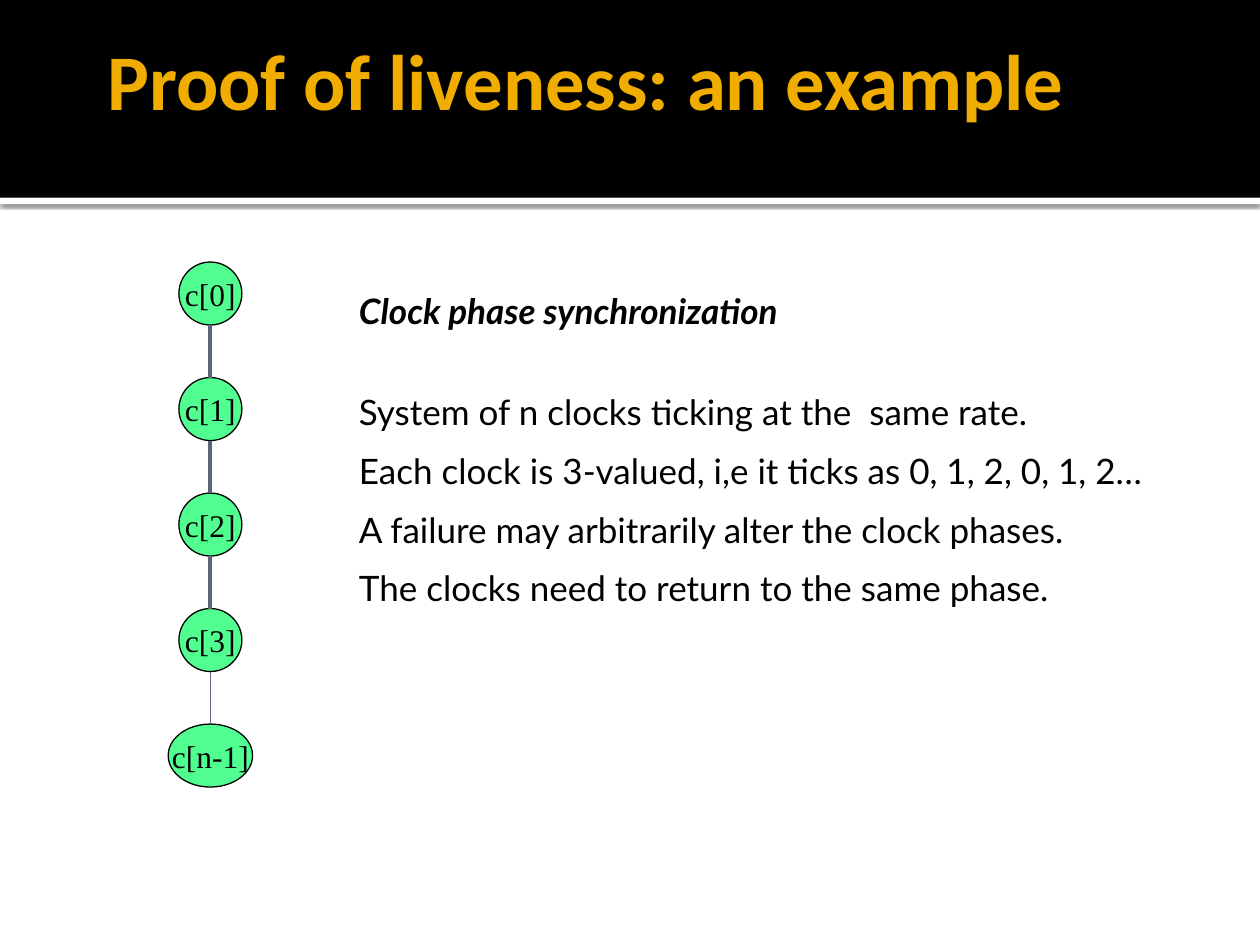
from lxml import etree
from pptx import Presentation
from pptx.dml.color import RGBColor
from pptx.enum.shapes import MSO_CONNECTOR, MSO_SHAPE
from pptx.enum.text import MSO_ANCHOR, MSO_AUTO_SIZE, PP_ALIGN
from pptx.oxml import parse_xml
from pptx.oxml.ns import qn
from pptx.util import Inches, Pt

RECT, OVAL = MSO_SHAPE.RECTANGLE, MSO_SHAPE.OVAL
LINE = MSO_CONNECTOR.STRAIGHT
MID, LEFT, CENTER = MSO_ANCHOR.MIDDLE, PP_ALIGN.LEFT, PP_ALIGN.CENTER
FIXED = MSO_AUTO_SIZE.NONE

TITLE = "Proof of liveness: an example"
HEAD = "Clock phase synchronization"
FACTS = [
    "System of n clocks ticking at the  same rate.",
    "Each clock is 3-valued, i,e it ticks as 0, 1, 2, 0, 1, 2…",
    "A failure may arbitrarily alter the clock phases.",
    "The clocks need to return to the same phase.",
]
CLOCKS = [("c[0]", 0.5), ("c[1]", 0.5), ("c[2]", 0.5), ("c[3]", 0.5), ("c[n-1]", 0.67)]
LINKS = [2.25, 2.25, 2.25, 0.75]
AXIS, TOP, HIGH = 1.67, 2.08, 0.5
STEP = 5.5 / 6

TITLE_FONT = {"name": "Calibri", "size": Pt(45), "bold": True}
HEAD_FONT = {"name": "Lato", "size": Pt(20), "bold": True, "italic": True}
FACT_FONT = {"name": "Lato", "size": Pt(20), "bold": False, "italic": False}
CLOCK_FONT = {"name": "Times New Roman", "size": Pt(18)}
HEAD_PARA = {"alignment": LEFT, "space_after": Pt(24)}
FACT_PARA = {"alignment": LEFT, "line_spacing": 1.4}
SHADOW = (
    '<a:effectLst xmlns:a="http://schemas.openxmlformats.org/drawingml/2006/main">'
    '<a:outerShdw blurRad="31750" dist="10160" dir="5400000" rotWithShape="0">'
    '<a:srgbClr val="000000"><a:alpha val="60000"/></a:srgbClr>'
    '</a:outerShdw></a:effectLst>'
)


def paint(color, tone):
    color.rgb = RGBColor.from_string(tone)


def format(item, values):
    for key, value in values.items():
        setattr(item, key, value)


def write(para, text, font, tone="000000", **values):
    run = para.add_run()
    run.text = text
    format(run.font, font)
    paint(run.font.color, tone)
    format(para, values)


def shape(kind, left, top, width, height, tone):
    item = slide.shapes.add_shape(
        kind, Inches(left), Inches(top), Inches(width), Inches(height))
    item.shadow.inherit = False
    item.fill.solid()
    paint(item.fill.fore_color, tone)
    item.line.fill.background()
    return item


deck = Presentation()
deck.slide_width, deck.slide_height = Inches(10), Inches(7.5)
slide = deck.slides.add_slide(deck.slide_layouts[5])

strip = shape(RECT, 0, 1.57, 10, 0.05, "FFFFFF")
props = strip._element.spPr
props.remove(props.find(qn("a:effectLst")))
props.append(parse_xml(SHADOW))
shape(RECT, 0, 0, 10, 1.57, "000000")

title = slide.shapes.title
format(title, {"left": Inches(0.75), "top": Inches(0),
               "width": Inches(8.5), "height": Inches(1.25)})
format(title.text_frame, {"vertical_anchor": MID, "auto_size": FIXED,
                          "word_wrap": True, "margin_right": Inches(0.05)})
write(title.text_frame.paragraphs[0], TITLE, TITLE_FONT, "F0AD00", alignment=LEFT)
slide.shapes._spTree.append(title._element)

for row, (name, width) in enumerate(CLOCKS):
    clock = shape(OVAL, AXIS - width / 2, TOP + row * STEP, width, HIGH, "51FF91")
    paint(clock.line.color, "000000")
    clock.line.width = Pt(0.75)
    format(clock.text_frame, {"vertical_anchor": MID, "word_wrap": False})
    write(clock.text_frame.paragraphs[0], name, CLOCK_FONT, alignment=CENTER)

for row, weight in enumerate(LINKS):
    start = TOP + row * STEP + HIGH
    link = slide.shapes.add_connector(
        LINE, Inches(AXIS), Inches(start), Inches(AXIS), Inches(start + STEP - HIGH))
    paint(link.line.color, "5A6378")
    link.line.width = Pt(weight)
    etree.SubElement(link._element.spPr, qn("a:effectLst"))

box = slide.shapes.add_textbox(Inches(2.75), Inches(2.25), Inches(6.67), Inches(2.64))
frame = box.text_frame
frame.word_wrap = True
write(frame.paragraphs[0], HEAD, HEAD_FONT, **HEAD_PARA)
for fact in FACTS:
    write(frame.add_paragraph(), fact, FACT_FONT, **FACT_PARA)

deck.save("out.pptx")
